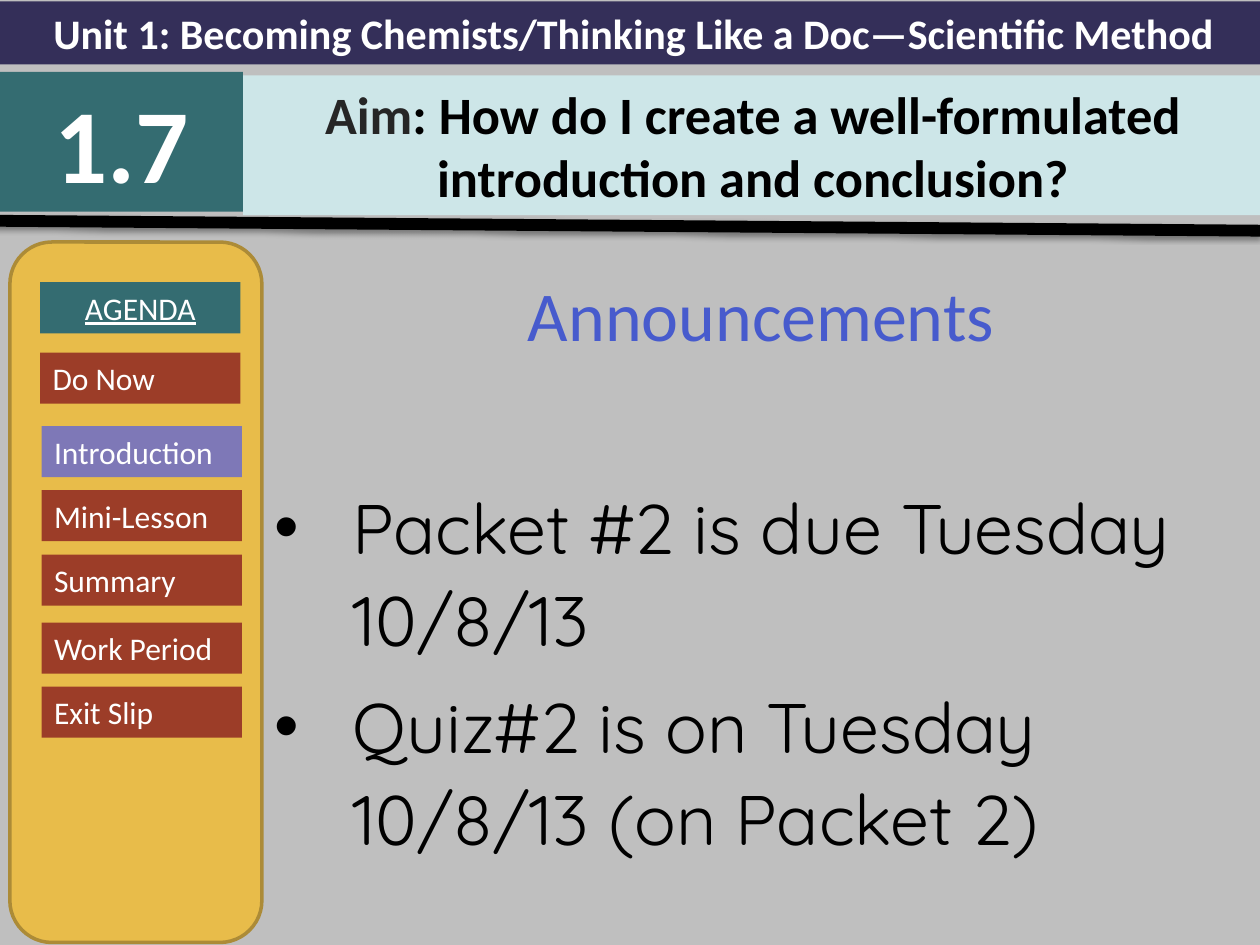
from lxml import etree
from pptx import Presentation
from pptx.dml.color import RGBColor
from pptx.enum.shapes import MSO_CONNECTOR, MSO_SHAPE
from pptx.enum.text import MSO_ANCHOR, PP_ALIGN
from pptx.oxml import parse_xml
from pptx.oxml.ns import nsdecls, qn
from pptx.util import Cm, Pt

RECT, ROUND = MSO_SHAPE.RECTANGLE, MSO_SHAPE.ROUNDED_RECTANGLE
LEFT, CENTER = PP_ALIGN.LEFT, PP_ALIGN.CENTER
MIDDLE, TOP = MSO_ANCHOR.MIDDLE, MSO_ANCHOR.TOP
STRAIGHT = MSO_CONNECTOR.STRAIGHT

BLACK = RGBColor(0x00, 0x00, 0x00)
WHITE = RGBColor(0xFF, 0xFF, 0xFF)
GREY = RGBColor(0xBF, 0xBF, 0xBF)
DARK = RGBColor(0x26, 0x26, 0x26)
NAVY = RGBColor(0x34, 0x2F, 0x59)
TEAL = RGBColor(0x34, 0x6C, 0x71)
PALE = RGBColor(0xCD, 0xE6, 0xE8)
GOLD = RGBColor(0xE8, 0xBC, 0x4A)
BROWN = RGBColor(0xAC, 0x8B, 0x37)
LILAC = RGBColor(0x7E, 0x78, 0xB7)
RUST = RGBColor(0x9C, 0x3D, 0x28)
BLUE = RGBColor(0x47, 0x5B, 0xCD)


def write(para, text, color, **form):
    """Add a run; form holds font attributes such as size or bold."""
    run = para.add_run()
    run.text = text
    run.font.color.rgb = color
    for key, val in form.items():
        setattr(run.font, key, val)


def block(kind, place, fill, align=CENTER):
    """Add a filled shape without outline and return it."""
    shape = slide.shapes.add_shape(kind, *map(Cm, place))
    shape.shadow.inherit = False
    shape.fill.solid()
    shape.fill.fore_color.rgb = fill
    shape.line.fill.background()
    frame = shape.text_frame
    frame.word_wrap = True
    frame.vertical_anchor = MIDDLE
    frame.paragraphs[0].alignment = align
    return shape


prs = Presentation()
prs.slide_width, prs.slide_height = Cm(25.4), Cm(19.05)
slide = prs.slides.add_slide(prs.slide_layouts[6])
slide.background.fill.solid()
slide.background.fill.fore_color.rgb = GREY

# Announcements
body = slide.shapes.add_textbox(Cm(5.28), Cm(5.18), Cm(20.12), Cm(13.87))
frame = body.text_frame
frame.word_wrap = True
frame.vertical_anchor = TOP
head = frame.paragraphs[0]
head.alignment = CENTER
head.line_spacing = 1.1
head.space_before = Pt(8)
write(head, "Announcements", BLUE, size=Pt(40), name="Calibri")

notes = [
    ("Packet #2 is due Tuesday 10/8/13", 69),
    ("Quiz#2 is on Tuesday 10/8/13 (on Packet 2)", 8),
]
for text, gap in notes:
    para = frame.add_paragraph()
    para.line_spacing = 1.1
    para.space_before = Pt(gap)
    write(para, text, BLACK, size=Pt(40), name="Quicksand")
    props = para._p.get_or_add_pPr()
    props.set("marL", str(Cm(1.57)))
    props.set("indent", str(Cm(-1.57)))
    etree.SubElement(props, qn("a:buFont")).set("typeface", "Arial")
    etree.SubElement(props, qn("a:buChar")).set("char", "•")

# Header
bold = {"name": "Calibri", "bold": True}
unit = block(RECT, (0, 0.03, 25.55, 1.27), NAVY)
write(unit.text_frame.paragraphs[0],
      "Unit 1: Becoming Chemists/Thinking Like a Doc—Scientific Method",
      WHITE, size=Pt(24), **bold)
number = block(RECT, (0, 1.45, 4.9, 2.82), TEAL)
write(number.text_frame.paragraphs[0], "1.7", WHITE, size=Pt(60), **bold)
aim = block(RECT, (4.9, 1.52, 20.57, 2.82), PALE).text_frame.paragraphs[0]
write(aim, "Aim", DARK, size=Pt(30), **bold)
write(aim, ": How do I create a well-formulated introduction and conclusion?",
      BLACK, size=Pt(30), **bold)

rule = slide.shapes.add_connector(
    STRAIGHT, Cm(-0.13), Cm(4.45), Cm(25.4), Cm(4.65))
rule.line.color.rgb = BLACK
rule.line.width = Pt(6.75)
rule._element.spPr.append(parse_xml(
    f'<a:effectLst {nsdecls("a")}><a:outerShdw blurRad="{Pt(3.1)}" '
    f'dist="{Pt(1.6)}" dir="5400000" rotWithShape="0">'
    '<a:srgbClr val="000000"><a:alpha val="38000"/></a:srgbClr>'
    '</a:outerShdw></a:effectLst>'))

# Agenda
panel = block(ROUND, (0.2, 4.88, 5.08, 14.12), GOLD)
panel.line.color.rgb = BROWN
panel.line.width = Pt(2)

items = [
    ("AGENDA", 0.81, 5.69, TEAL),
    ("Do Now", 0.81, 7.11, RUST),
    ("Introduction", 0.84, 8.59, LILAC),
    ("Mini-Lesson", 0.84, 9.88, RUST),
    ("Summary", 0.84, 11.18, RUST),
    ("Work Period", 0.84, 12.55, RUST),
    ("Exit Slip", 0.84, 13.84, RUST),
]
for text, left, top, fill in items:
    title = text == "AGENDA"
    item = block(RECT, (left, top, 4.04, 1.03), fill, CENTER if title else LEFT)
    write(item.text_frame.paragraphs[0], text, WHITE,
          size=Pt(18), name="Calibri", underline=title)

prs.save("out.pptx")
